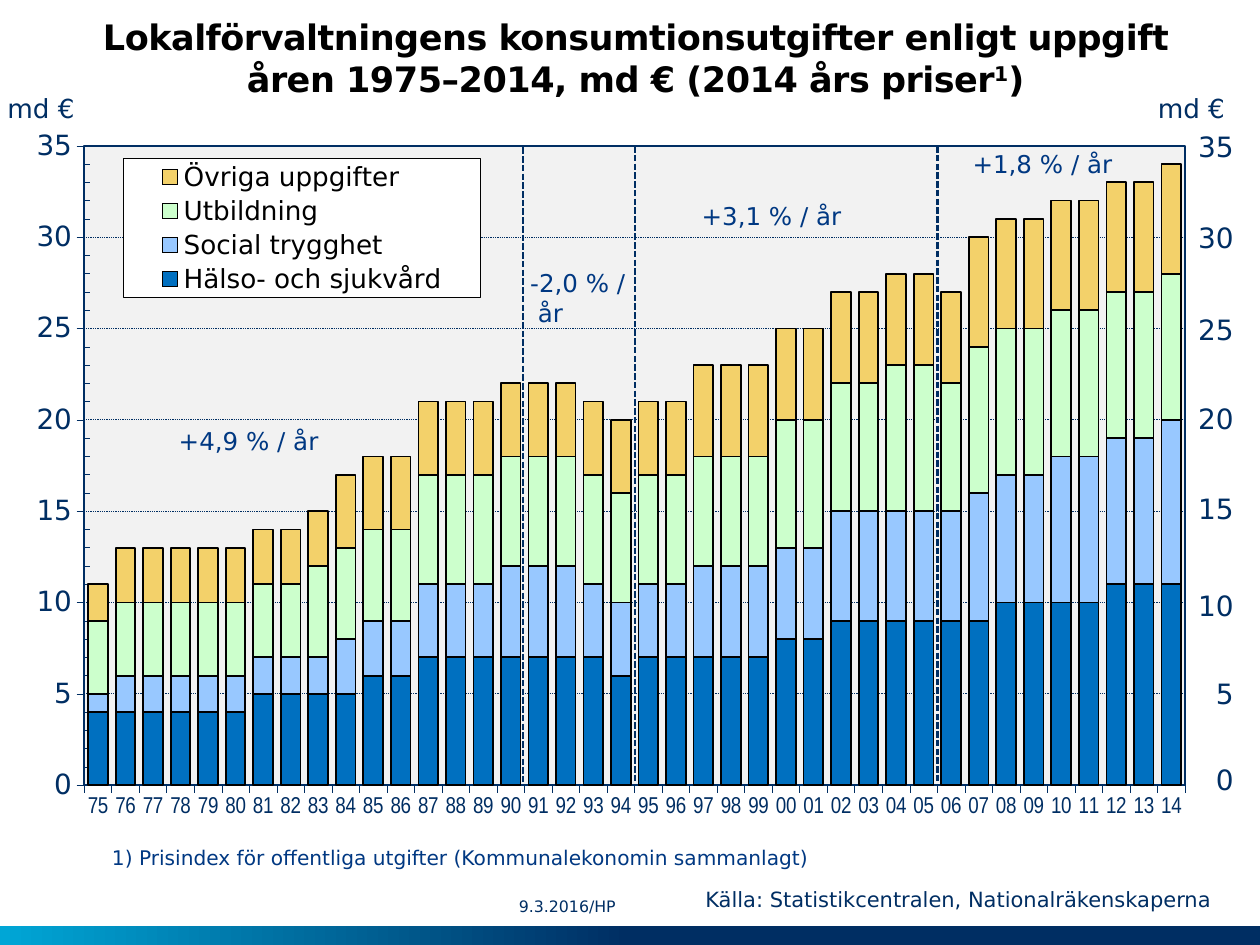
import pptx
import pptx.chart.data
import pptx.dml.color
import pptx.enum.chart
import pptx.enum.dml
import pptx.enum.shapes
import pptx.enum.text
import pptx.oxml
import pptx.oxml.ns
import pptx.util
from typing import NamedTuple

Inches, Pt = pptx.util.Inches, pptx.util.Pt
ALIGN = pptx.enum.text.PP_ALIGN
ANCHOR = pptx.enum.text.MSO_ANCHOR
DASH = pptx.enum.dml.MSO_LINE
TICK = pptx.enum.chart.XL_TICK_MARK
NAVY, BLUE, BLACK = "002E63", "003882", "000000"
FONT = "DejaVu Sans"


class Label(NamedTuple):
    text: str
    left: float
    top: float
    width: float
    height: float
    size: float
    color: str = NAVY
    align: ALIGN = ALIGN.LEFT


class Series(NamedTuple):
    name: str
    color: str
    values: list[int]


YEARS = [f"{year % 100:02d}" for year in range(1975, 2015)]
SERIES = [
    Series("Hälso- och sjukvård", "0070C0", [
        4, 4, 4, 4, 4, 4, 5, 5, 5, 5, 6, 6, 7, 7, 7, 7, 7, 7, 7, 6,
        7, 7, 7, 7, 7, 8, 8, 9, 9, 9, 9, 9, 9, 10, 10, 10, 10, 11, 11, 11]),
    Series("Social trygghet", "98C8FF", [
        1, 2, 2, 2, 2, 2, 2, 2, 2, 3, 3, 3, 4, 4, 4, 5, 5, 5, 4, 4,
        4, 4, 5, 5, 5, 5, 5, 6, 6, 6, 6, 6, 7, 7, 7, 8, 8, 8, 8, 9]),
    Series("Utbildning", "CCFFCC", [
        4, 4, 4, 4, 4, 4, 4, 4, 5, 5, 5, 5, 6, 6, 6, 6, 6, 6, 6, 6,
        6, 6, 6, 6, 6, 7, 7, 7, 7, 8, 8, 7, 8, 8, 8, 8, 8, 8, 8, 8]),
    Series("Övriga uppgifter", "F3D16A", [
        2, 3, 3, 3, 3, 3, 3, 3, 3, 4, 4, 4, 4, 4, 4, 4, 4, 4, 4, 4,
        4, 4, 5, 5, 5, 5, 5, 5, 5, 5, 5, 5, 6, 6, 6, 6, 6, 6, 6, 6]),
]
RIGHT_AXIS_TOPS = {35: 0.98, 30: 1.7, 25: 2.43, 20: 3.14, 15: 3.85, 10: 4.62, 5: 5.32, 0: 6}
PERIOD_BREAKS = [(4.15, 1.17), (5.04, 1.16), (7.44, 1.16)]
LABELS = [
    Label("md €", -0.04, 0.68, 0.75, 0.35, 15),
    Label("md €", 9.09, 0.68, 0.75, 0.35, 15),
    Label("+4,9 % / år", 1.32, 3.33, 1.39, 0.34, 14, BLUE),
    Label("+3,1 % / år", 5.47, 1.55, 1.39, 0.34, 14, BLUE),
    Label("+1,8 % / år", 7.62, 1.13, 1.39, 0.34, 14, BLUE),
    Label("-2,0 % /\når", 4.11, 2.08, 1.05, 0.57, 14, BLUE),
    Label("1) Prisindex för offentliga utgifter (Kommunalekonomin sammanlagt)",
          0.79, 6.66, 5.99, 0.29, 11.5, BLUE),
    Label("Källa: Statistikcentralen, Nationalräkenskaperna", 5.5, 6.99, 4.3, 0.3, 12),
    Label("9.3.2016/HP", 4.02, 7.07, 1, 0.29, 9),
] + [Label(str(value), 9.4, top, 0.49, 0.37, 16, align=ALIGN.RIGHT)
     for value, top in RIGHT_AXIS_TOPS.items()]


def rgb(color: str):
    return pptx.dml.color.RGBColor.from_string(color)


def style_font(font, size: float, color: str, name: str = FONT, bold: bool = False) -> None:
    font.size, font.name, font.bold = Pt(size), name, bold
    font.color.rgb = rgb(color)


def style_line(line, color: str, width: float, dash=None) -> None:
    line.color.rgb = rgb(color)
    line.width = Pt(width)
    if dash:
        line.dash_style = dash


def add_label(slide, label: Label) -> None:
    box = slide.shapes.add_textbox(*map(Inches, label[1:5]))
    tf = box.text_frame
    tf.word_wrap = False
    tf.text = label.text
    for p in tf.paragraphs:
        p.alignment = label.align
        style_font(p.font, label.size, label.color)
    for p in tf.paragraphs[1:]:
        p._p.get_or_add_pPr().set("marL", str(Inches(0.06)))


def add_title(slide) -> None:
    title = slide.shapes.title
    title.left, title.top, title.width, title.height = map(Inches, (0.36, 0.05, 9.37, 0.79))
    tf = title.text_frame
    tf.vertical_anchor = ANCHOR.BOTTOM
    tf.auto_size = pptx.enum.text.MSO_AUTO_SIZE.NONE
    tf.margin_left = tf.margin_right = 0
    p = tf.paragraphs[0]
    p.text = ("Lokalförvaltningens konsumtionsutgifter enligt uppgift\v"
              "åren 1975–2014, md € (2014 års priser")
    for text in ("1", ")"):
        p.add_run().text = text
    p.alignment = ALIGN.CENTER
    style_font(p.font, 20, BLACK, bold=True)
    for r in p.runs:
        r._r.get_or_add_rPr().set("spc", "-30")
    p.runs[-2]._r.get_or_add_rPr().set("baseline", "30000")


def chart_xml(tag: str, body: str):
    ns = pptx.oxml.ns.nsdecls("c", "a")
    return pptx.oxml.parse_xml(f"<c:{tag} {ns}>{body}</c:{tag}>")


def layout_xml(x: float, y: float, w: float, h: float, target: str = ""):
    return chart_xml("layout", "<c:manualLayout>" + target
                     + '<c:xMode val="edge"/><c:yMode val="edge"/>'
                     + f'<c:x val="{x}"/><c:y val="{y}"/><c:w val="{w}"/><c:h val="{h}"/>'
                     + "</c:manualLayout>")


def box_xml(fill: str, line: str, width: float):
    return chart_xml("spPr", f'<a:solidFill><a:srgbClr val="{fill}"/></a:solidFill>'
                     f'<a:ln w="{Pt(width)}"><a:solidFill><a:srgbClr val="{line}"/>'
                     "</a:solidFill></a:ln>")


def remove_layout(element) -> None:
    for old in element.findall(pptx.oxml.ns.qn("c:layout")):
        element.remove(old)


def add_spending_chart(slide) -> None:
    data = pptx.chart.data.CategoryChartData(number_format="0")
    data.categories = YEARS
    for series in SERIES:
        data.add_series(series.name, series.values)
    chart = slide.shapes.add_chart(pptx.enum.chart.XL_CHART_TYPE.COLUMN_STACKED,
                                   *map(Inches, (0.12, 0.97, 9.37, 5.69)), data).chart
    chart.has_title = False
    style_font(chart.font, 15, NAVY)
    plot = chart.plots[0]
    plot.gap_width, plot.overlap, plot.vary_by_categories = 40, 100, False
    for s, series in zip(plot.series, SERIES):
        s.format.fill.solid()
        s.format.fill.fore_color.rgb = rgb(series.color)
        style_line(s.format.line, BLACK, 1)

    cat, val = chart.category_axis, chart.value_axis
    for axis in (cat, val):
        axis.major_tick_mark = TICK.OUTSIDE
        style_line(axis.format.line, NAVY, 0.31)
    style_font(cat.tick_labels.font, 13.1, NAVY, "Arial Narrow")
    style_font(val.tick_labels.font, 15.9, NAVY)
    val.minimum_scale, val.maximum_scale = 0, 35
    val.major_unit, val.minor_unit = 5, 1
    val.minor_tick_mark = TICK.INSIDE
    val.tick_labels.number_format, val.tick_labels.number_format_is_linked = "0", False
    style_line(val.major_gridlines.format.line, NAVY, 0.5, DASH.ROUND_DOT)

    chart.has_legend = True
    legend = chart.legend
    legend.position = pptx.enum.chart.XL_LEGEND_POSITION.RIGHT
    legend.include_in_layout = True
    style_font(legend.font, 15, BLACK)
    element = legend._element
    remove_layout(element)
    element.find(pptx.oxml.ns.qn("c:legendPos")).addnext(layout_xml(0.092, 0.051, 0.302, 0.193))
    element.find(pptx.oxml.ns.qn("c:txPr")).addprevious(box_xml("FFFFFF", BLACK, 0.5))

    area = chart._chartSpace.chart.plotArea
    remove_layout(area)
    area.insert(0, layout_xml(0.0585, 0.033, 0.9325, 0.892, '<c:layoutTarget val="inner"/>'))
    area.append(box_xml("F2F2F2", NAVY, 1.25))


def add_period_break(slide, x: float, top: float) -> None:
    line = slide.shapes.add_connector(pptx.enum.shapes.MSO_CONNECTOR.STRAIGHT,
                                      *map(Inches, (x, top, x, top + 5.04)))
    style_line(line.line, NAVY, 1.25, DASH.SQUARE_DOT)
    line._element.spPr.append(pptx.oxml.parse_xml(
        f"<a:effectLst {pptx.oxml.ns.nsdecls('a')}/>"))


def add_footer_band(slide) -> None:
    sp = slide.shapes.add_shape(pptx.enum.shapes.MSO_SHAPE.RECTANGLE,
                                *map(Inches, (0, 7.35, 10, 0.15)))
    sp.shadow.inherit = False
    sp.line.fill.background()
    sp.fill.gradient()
    sp.fill.gradient_angle = 180
    for stop, (position, color) in zip(sp.fill.gradient_stops, [(0.5, NAVY), (1, "00A6D6")]):
        stop.position, stop.color.rgb = position, rgb(color)


def main() -> None:
    prs = pptx.Presentation()
    prs.slide_width, prs.slide_height = Inches(10), Inches(7.5)
    slide = prs.slides.add_slide(prs.slide_layouts[5])
    add_footer_band(slide)
    add_spending_chart(slide)
    for x, top in PERIOD_BREAKS:
        add_period_break(slide, x, top)
    for label in LABELS:
        add_label(slide, label)
    add_title(slide)
    prs.save("out.pptx")


if __name__ == "__main__":
    main()
